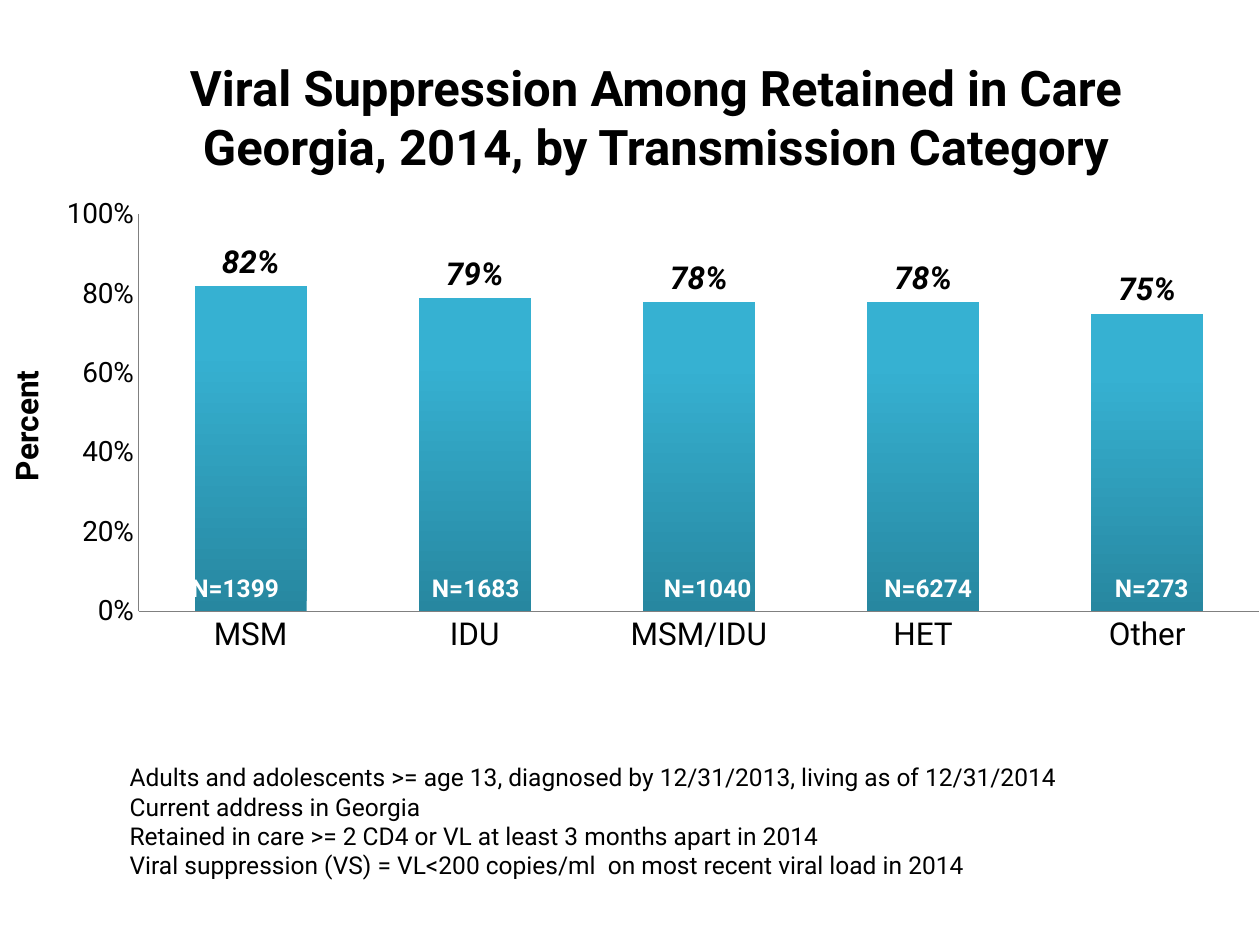
from lxml import etree
from pptx import Presentation
from pptx import util as u
from pptx.chart.data import CategoryChartData
from pptx.dml.color import RGBColor
from pptx.enum import chart as charts, text
from pptx.oxml import parse_xml
from pptx.oxml.ns import nsdecls, qn

FONT = "Roboto"
COLORS = {"text": "000000", "count": "FFFFFF", "axis": "808080",
          "bar_bottom": "2787A0", "bar_top": "36B1D2"}
RATES = {"MSM": 0.82, "IDU": 0.79, "MSM/IDU": 0.78, "HET": 0.78, "Other": 0.75}
# Text, left and width of the counts at the foot of the bars
COUNTS = [("N=1399", 1.42, 0.9), ("N=1683", 3.33, 0.9), ("N=1040", 5.17, 0.9),
          ("N=6274", 6.92, 0.9), ("N=273", 8.75, 0.79)]
NOTES = [
    "Adults and adolescents >= age 13, diagnosed by 12/31/2013, living as of 12/31/2014",
    "Current address in Georgia",
    "Retained in care >= 2 CD4 or VL at least 3 months apart in 2014",
    "Viral suppression (VS) = VL<200 copies/ml  on most recent viral load in 2014",
]


def rgb(name):
    return RGBColor.from_string(COLORS[name])


def style_font(font, size, color="text", bold=False, italic=False):
    font.name = FONT
    font.size = u.Pt(size)
    font.bold = bold
    font.italic = italic
    font.color.rgb = rgb(color)


def add_title(slide, words):
    title = slide.shapes.title
    title.left, title.top = u.Inches(0.58), u.Inches(0.3)
    title.width, title.height = u.Inches(9.25), u.Inches(1.25)
    frame = title.text_frame
    frame.text = words
    frame.vertical_anchor = text.MSO_ANCHOR.MIDDLE
    para = frame.paragraphs[0]
    para.alignment = text.PP_ALIGN.CENTER
    for span in para.runs:
        style_font(span.font, 28, bold=True)


def add_text(slide, lines, left, top, width, height, wrap, **look):
    box = slide.shapes.add_textbox(u.Inches(left), u.Inches(top),
                                   u.Inches(width), u.Inches(height))
    frame = box.text_frame
    frame.word_wrap = wrap
    frame.auto_size = text.MSO_AUTO_SIZE.SHAPE_TO_FIT_TEXT
    frame.text = "\n".join(lines)
    for para in frame.paragraphs:
        for span in para.runs:
            style_font(span.font, 14, **look)


def place_plot(chart, **place):
    """Fix the inner plot area, in fractions of the chart."""
    area = chart.element.chart.plotArea
    for old in area.findall(qn("c:layout")):
        area.remove(old)
    layout = parse_xml(f"<c:layout {nsdecls('c')}><c:manualLayout/></c:layout>")
    values = {"layoutTarget": "inner", "xMode": "edge", "yMode": "edge", **place}
    for tag, value in values.items():
        etree.SubElement(layout[0], qn(f"c:{tag}")).set("val", str(value))
    area.insert(0, layout)


def style_axis(axis, size):
    axis.has_major_gridlines = False
    axis.major_tick_mark = axis.minor_tick_mark = charts.XL_TICK_MARK.NONE
    axis.format.line.color.rgb = rgb("axis")
    axis.format.line.width = u.Pt(0.75)
    style_font(axis.tick_labels.font, size)


def style_bars(plot):
    plot.gap_width, plot.overlap = 100, -24
    plot.vary_by_categories = False
    fill = plot.series[0].format.fill
    fill.gradient()
    fill.gradient_angle = 90
    stops = [("bar_bottom", 0), ("bar_top", 0.8)]
    for stop, (color, position) in zip(fill.gradient_stops, stops):
        stop.color.rgb = rgb(color)
        stop.position = position
    plot.has_data_labels = True
    labels = plot.data_labels
    labels.show_value = True
    labels.position = charts.XL_LABEL_POSITION.OUTSIDE_END
    labels.number_format = "0%"
    labels.number_format_is_linked = False
    style_font(labels.font, 18, bold=True, italic=True)


def add_rate_chart(slide):
    data = CategoryChartData(number_format="0%")
    data.categories = list(RATES)
    data.add_series("Series 1", list(RATES.values()))
    chart = slide.shapes.add_chart(
        charts.XL_CHART_TYPE.COLUMN_CLUSTERED, u.Inches(0), u.Inches(1.5),
        u.Inches(10), u.Inches(5.08), data).chart
    chart.has_legend = False
    chart.has_title = False
    style_font(chart.font, 18)
    style_axis(chart.category_axis, 18)
    percent = chart.value_axis
    style_axis(percent, 16)
    percent.minimum_scale, percent.maximum_scale = 0, 1
    percent.major_unit = 0.2
    percent.tick_labels.number_format = "0%"
    percent.tick_labels.number_format_is_linked = False
    frame = percent.axis_title.text_frame
    frame.text = "Percent"
    style_font(frame.paragraphs[0].runs[0].font, 18, bold=True)
    style_bars(chart.plots[0])
    place_plot(chart, x=0.11, y=0.04, w=0.89, h=0.62)


def main():
    deck = Presentation()
    deck.slide_width, deck.slide_height = u.Inches(10), u.Inches(7.5)
    page = deck.slides.add_slide(deck.slide_layouts[5])
    add_title(page, "Viral Suppression Among Retained in Care\v"
                    "Georgia, 2014, by Transmission Category")
    add_rate_chart(page)
    for count, left, width in COUNTS:
        add_text(page, [count], left, 4.5, width, 0.34, False,
                 color="count", bold=True)
    add_text(page, NOTES, 0.93, 6, 9.25, 1.04, True)
    deck.save("out.pptx")


if __name__ == "__main__":
    main()
